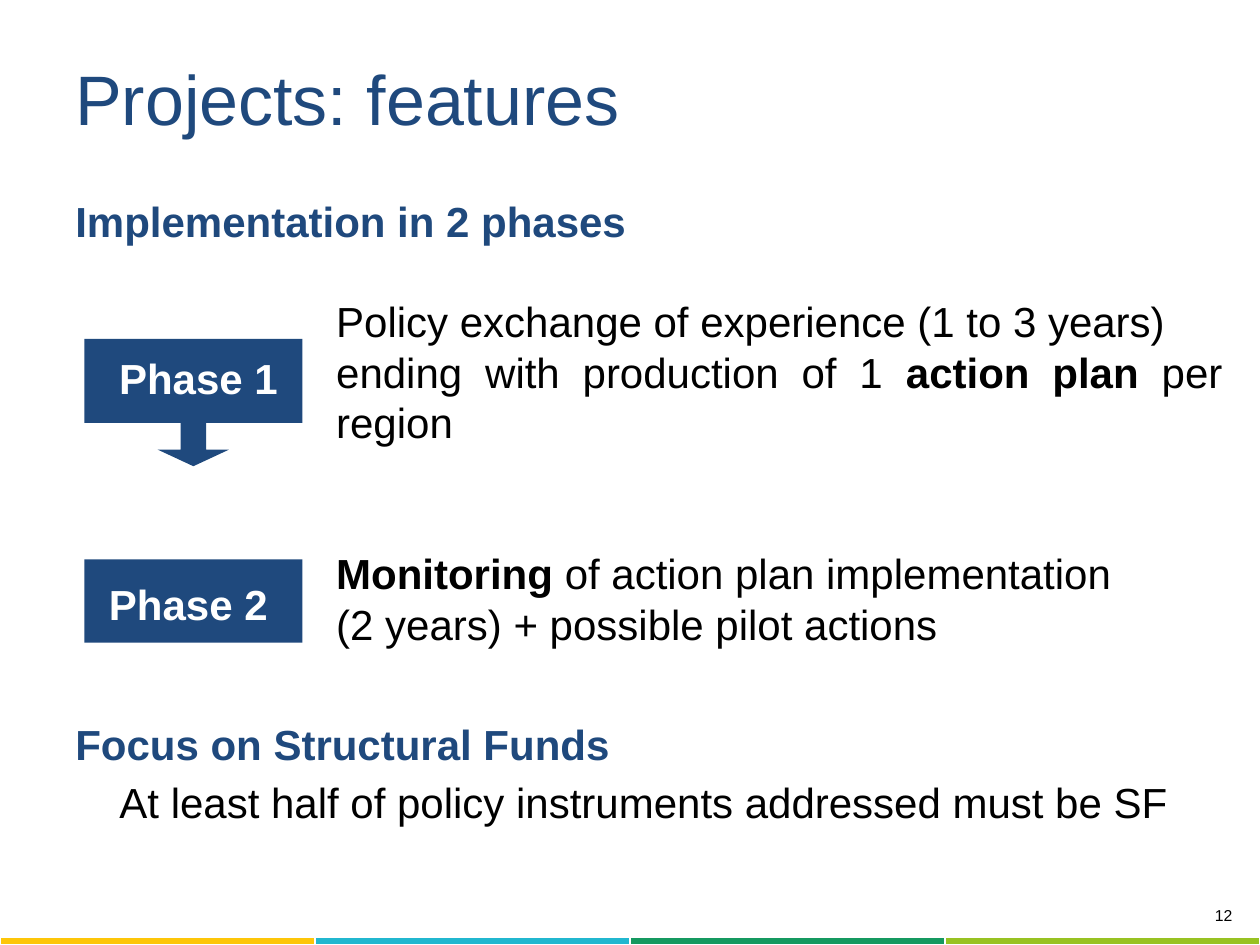
from dataclasses import dataclass

from lxml import etree
from pptx import Presentation
from pptx import util as u
from pptx.dml.color import RGBColor
from pptx.enum import shapes, text
from pptx.oxml import ns

ALIGN = text.PP_ALIGN


@dataclass(frozen=True)
class Theme:
    font: str = "Arial"
    navy: str = "1F497D"
    black: str = "000000"
    white: str = "FFFFFF"
    stripes: tuple = ("FDC609", "21B7CF", "159960", "98C222")
    title: int = 40
    body: int = 24
    small: int = 9
    leading: float = 1.2


class SlideMaker:
    """Places elements on a grid of 100 columns by 75 rows."""

    columns, rows = 100, 75

    def __init__(self, deck, theme):
        self.theme = theme
        self.cell_width = deck.slide_width / self.columns
        self.cell_height = deck.slide_height / self.rows
        self.page = deck.slides.add_slide(deck.slide_layouts[6])

    def area(self, column, row, width, height):
        return [u.Emu(round(cells * size)) for cells, size in (
            (column, self.cell_width), (row, self.cell_height),
            (width, self.cell_width), (height, self.cell_height))]

    def box(self, area, anchor=text.MSO_ANCHOR.TOP):
        frame = self.page.shapes.add_textbox(*self.area(*area)).text_frame
        frame.word_wrap = True
        frame.vertical_anchor = anchor
        return frame

    def para(self, frame, spans, size, color, bold=None, align=ALIGN.LEFT,
             indent=0, before=0):
        """Add a paragraph; spans holds (wording, bold) pairs or one string."""
        first = frame.paragraphs[0]
        para = frame.add_paragraph() if first.runs else first
        para.alignment = align
        para.line_spacing = u.Pt(size * self.theme.leading)
        para.space_before = u.Pt(before)
        if indent:
            para._p.get_or_add_pPr().set("marL", str(u.Inches(indent)))
        font = para.font
        font.name, font.size = self.theme.font, u.Pt(size)
        font.color.rgb = RGBColor.from_string(color)
        if isinstance(spans, str):
            spans = [(spans, bold)]
        for wording, weight in spans:
            span = para.add_run()
            span.text = wording
            span.font.bold = weight

    def label(self, area, wording, size, color, bold=None, align=ALIGN.LEFT,
              anchor=text.MSO_ANCHOR.TOP):
        self.para(self.box(area, anchor), wording, size, color, bold, align)

    def block(self, kind, area, adjustments=()):
        shape = self.page.shapes.add_shape(kind, *self.area(*area))
        shape.shadow.inherit = False
        shape.fill.solid()
        shape.fill.fore_color.rgb = RGBColor.from_string(self.theme.navy)
        shape.line.fill.background()
        for index, value in enumerate(adjustments):
            shape.adjustments[index] = value

    def stripe(self, area, colors):
        table = self.page.shapes.add_table(
            1, len(colors), *self.area(*area)).table
        for cell, color in zip(table.rows[0].cells, colors):
            cell.fill.solid()
            cell.fill.fore_color.rgb = RGBColor.from_string(color)
            cell.margin_left = cell.margin_right = 0
            cell.margin_top = cell.margin_bottom = 0
            # A tiny font keeps the empty row thin
            etree.SubElement(cell.text_frame.paragraphs[0]._p,
                             ns.qn("a:endParaRPr"), sz="100")


def main():
    deck = Presentation()
    deck.slide_width, deck.slide_height = u.Inches(10), u.Inches(7.5)
    theme = Theme()
    maker = SlideMaker(deck, theme)

    # Footer
    maker.stripe((0, 74.4, 100, 0.6), theme.stripes)
    maker.label((79.1, 71.4, 19.7, 3.1), "12", theme.small, theme.black,
                align=ALIGN.RIGHT)

    # Title
    maker.label((5, 4.7, 90, 6.1), "Projects: features", theme.title,
                theme.navy, anchor=text.MSO_ANCHOR.MIDDLE)

    # Body: headings, phase descriptions and closing line
    body = maker.box((5, 15, 93, 56.7))
    line = theme.body * theme.leading
    gap = theme.body * 0.2

    def heading(wording, before=0):
        maker.para(body, wording, theme.body, theme.navy, True, before=before)

    def detail(spans, before=0):
        maker.para(body, spans, theme.body, theme.black, align=ALIGN.JUSTIFY,
                   indent=2.07, before=before)

    heading("Implementation in 2 phases")
    detail("Policy exchange of experience (1 to 3 years)", line)
    detail([("ending with production of 1 ", None), ("action plan ", True),
            ("per region", None)])
    detail([("Monitoring ", True), ("of action plan implementation", None)],
           2 * line)
    detail("(2 years) + possible pilot actions")
    heading("Focus on Structural Funds", line + gap + 6)
    maker.para(body, "At least half of policy instruments addressed must be SF",
               theme.body, theme.black, indent=0.35, before=gap)

    # Phase markers
    kinds = shapes.MSO_SHAPE
    maker.block(kinds.DOWN_ARROW_CALLOUT, (6.7, 26.9, 17.3, 10.1),
                (0.2, 0.28, 0.13, 0.66))
    maker.block(kinds.RECTANGLE, (6.7, 44.4, 17.3, 6.6))
    for wording, area in (("Phase 1", (8.4, 27.5, 14.7, 5)),
                          ("Phase 2", (6.7, 45.4, 16.5, 5))):
        maker.label(area, wording, theme.body, theme.white, True, ALIGN.CENTER)

    deck.save("out.pptx")


if __name__ == "__main__":
    main()
